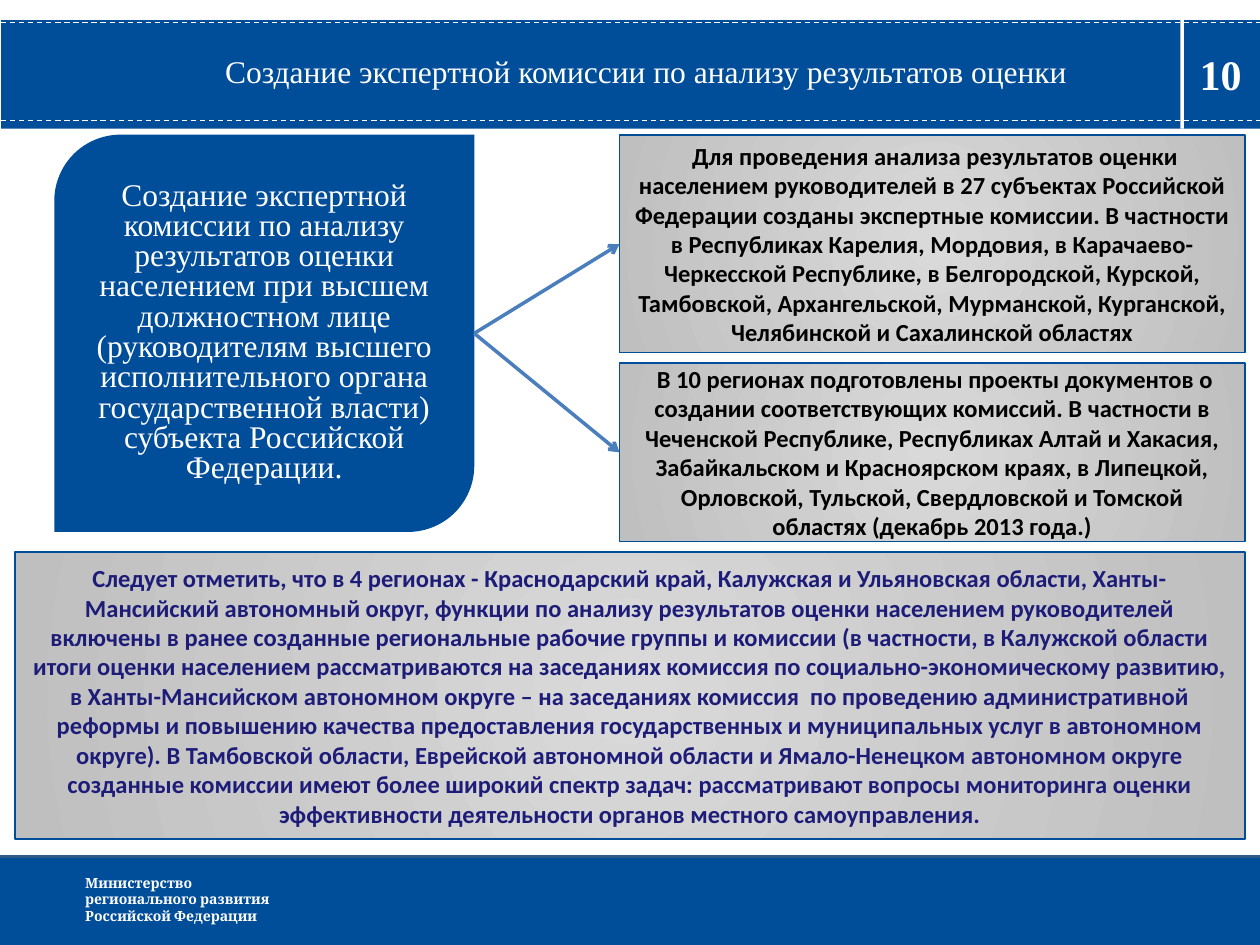
from pptx import Presentation
from pptx.dml.color import RGBColor
from pptx.enum.dml import MSO_LINE
from pptx.enum.shapes import MSO_CONNECTOR, MSO_SHAPE
from pptx.enum.text import MSO_ANCHOR, PP_ALIGN
from pptx.oxml import parse_xml
from pptx.oxml.ns import nsdecls, qn
from pptx.util import Pt


def rgb(h):
    return RGBColor.from_string(h)


def write(sp, lines, size, font, color, bold=False, align=PP_ALIGN.CENTER, spacing=None):
    tf = sp.text_frame
    tf.word_wrap = True
    for i, line in enumerate(lines):
        p = tf.paragraphs[0] if i == 0 else tf.add_paragraph()
        p.alignment = align
        if spacing:
            p.line_spacing = spacing
        r = p.add_run()
        r.text = line
        r.font.size = Pt(size)
        r.font.name = font
        r.font.bold = bold
        r.font.color.rgb = rgb(color)
    return tf


BLUE, WHITE, NAVY, BLACK = "004D9A", "FFFFFF", "1D1D79", "000000"
SERIF = "Times New Roman"

prs = Presentation()
prs.slide_width, prs.slide_height = Pt(720), Pt(540)
s = prs.slides.add_slide(prs.slide_layouts[6])

for kind, x, y, w, h, color in [
    (MSO_SHAPE.RECTANGLE, 0.7, 11.5, 719.3, 62, BLUE),
    (MSO_SHAPE.RECTANGLE, 674.5, 11, 2, 62.5, WHITE),
    (MSO_SHAPE.RECTANGLE, 0, 489.5, 720, 50.5, BLUE),
    (MSO_SHAPE.ROUND_2_DIAG_RECTANGLE, 31, 77, 240, 227, BLUE),
]:
    sp = s.shapes.add_shape(kind, Pt(x), Pt(y), Pt(w), Pt(h))
    sp.shadow.inherit = False
    sp.fill.solid()
    sp.fill.fore_color.rgb = rgb(color)
    sp.line.fill.background()

tf = write(sp, [
    "Создание экспертной комиссии по анализу результатов оценки населением при высшем должностном лице "
    "(руководителям высшего исполнительного органа государственной власти) субъекта Российской Федерации.",
], 18, SERIF, WHITE, spacing=0.8)
tf.vertical_anchor = MSO_ANCHOR.MIDDLE

sp = s.shapes.add_textbox(Pt(70.5), Pt(31.5), Pt(602), Pt(44))
tf = write(sp, ["Создание экспертной комиссии по анализу результатов оценки "], 18, SERIF, WHITE, spacing=0.8)
tf.margin_left = tf.margin_right = Pt(4.3)
tf.margin_top = tf.margin_bottom = Pt(2.2)

sp = s.shapes.add_textbox(Pt(675), Pt(24), Pt(45), Pt(36))
write(sp, ["10"], 24, SERIF, WHITE, bold=True)

sp = s.shapes.add_textbox(Pt(41.5), Pt(496), Pt(183.5), Pt(36))
write(sp, ["Министерство", "регионального развития", "Российской Федерации"],
      8, "Cambria", WHITE, bold=True, align=PP_ALIGN.LEFT)

for x, y, w, h, color, sentences in [
    (354, 77, 357.5, 124.5, BLACK, [
        " Для проведения анализа результатов оценки населением руководителей в 27 субъектах Российской "
        "Федерации созданы экспертные комиссии.",
        "В частности в Республиках Карелия, Мордовия, в Карачаево-Черкесской Республике, в Белгородской, "
        "Курской, Тамбовской, Архангельской, Мурманской, Курганской, Челябинской и Сахалинской областях",
    ]),
    (354, 207.5, 357.5, 102, BLACK, [
        " В 10 регионах подготовлены проекты документов о создании соответствующих комиссий.",
        "В частности в Чеченской Республике, Республиках Алтай и Хакасия, Забайкальском и Красноярском "
        "краях, в Липецкой, Орловской, Тульской, Свердловской и Томской областях (декабрь 2013 года.)",
    ]),
    (8.5, 315.5, 703, 164, NAVY, [
        "Следует отметить, что в 4 регионах - Краснодарский край, Калужская и Ульяновская области, "
        "Ханты-Мансийский автономный округ, функции по анализу результатов оценки населением руководителей "
        "включены в ранее созданные региональные рабочие группы и комиссии (в частности, в Калужской области "
        "итоги оценки населением рассматриваются на заседаниях комиссия по социально-экономическому развитию, "
        "в Ханты-Мансийском автономном округе – на заседаниях комиссия  по проведению административной "
        "реформы и повышению качества предоставления государственных и муниципальных услуг в автономном "
        "округе).",
        "В Тамбовской области, Еврейской автономной области и Ямало-Ненецком автономном округе созданные "
        "комиссии имеют более широкий спектр задач: рассматривают вопросы мониторинга оценки эффективности "
        "деятельности органов местного самоуправления.",
    ]),
]:
    sp = s.shapes.add_shape(MSO_SHAPE.RECTANGLE, Pt(x), Pt(y), Pt(w), Pt(h))
    sp.shadow.inherit = False
    sp.fill.gradient()
    for stop, position, shade in zip(sp.fill.gradient_stops, (0, 1), ("D9D9D9", "BFBFBF")):
        stop.position = position
        stop.color.rgb = rgb(shade)
    grad = sp.element.spPr.find(qn("a:gradFill"))
    grad.replace(grad.find(qn("a:lin")), parse_xml(
        f'<a:path {nsdecls("a")} path="circle">'
        '<a:fillToRect l="50000" t="50000" r="50000" b="50000"/></a:path>'))
    sp.line.color.rgb = rgb(BLUE)
    sp.line.width = Pt(1)
    tf = write(sp, [" ".join(sentences)], 14, "Calibri", color, bold=True)
    tf.vertical_anchor = MSO_ANCHOR.MIDDLE

for x1, y1, x2, y2, color, width, dashed, arrow in [
    (0.7, 13, 720, 13, WHITE, 0.75, True, False),
    (0.7, 69, 720, 69, WHITE, 0.75, True, False),
    (0, 489.5, 720, 489.5, "2D5A87", 2, False, False),
    (271, 190.5, 354, 139.5, "4B7EBC", 2, False, True),
    (271, 190.5, 354, 258.5, "4B7EBC", 2, False, True),
]:
    c = s.shapes.add_connector(MSO_CONNECTOR.STRAIGHT, Pt(x1), Pt(y1), Pt(x2), Pt(y2))
    c.line.color.rgb = rgb(color)
    c.line.width = Pt(width)
    if dashed:
        c.line.dash_style = MSO_LINE.DASH
    spPr = c.element.spPr
    if arrow:
        spPr.find(qn("a:ln")).append(parse_xml(f'<a:tailEnd {nsdecls("a")} type="arrow"/>'))
    spPr.append(parse_xml(f'<a:effectLst {nsdecls("a")}/>'))

prs.save("out.pptx")
